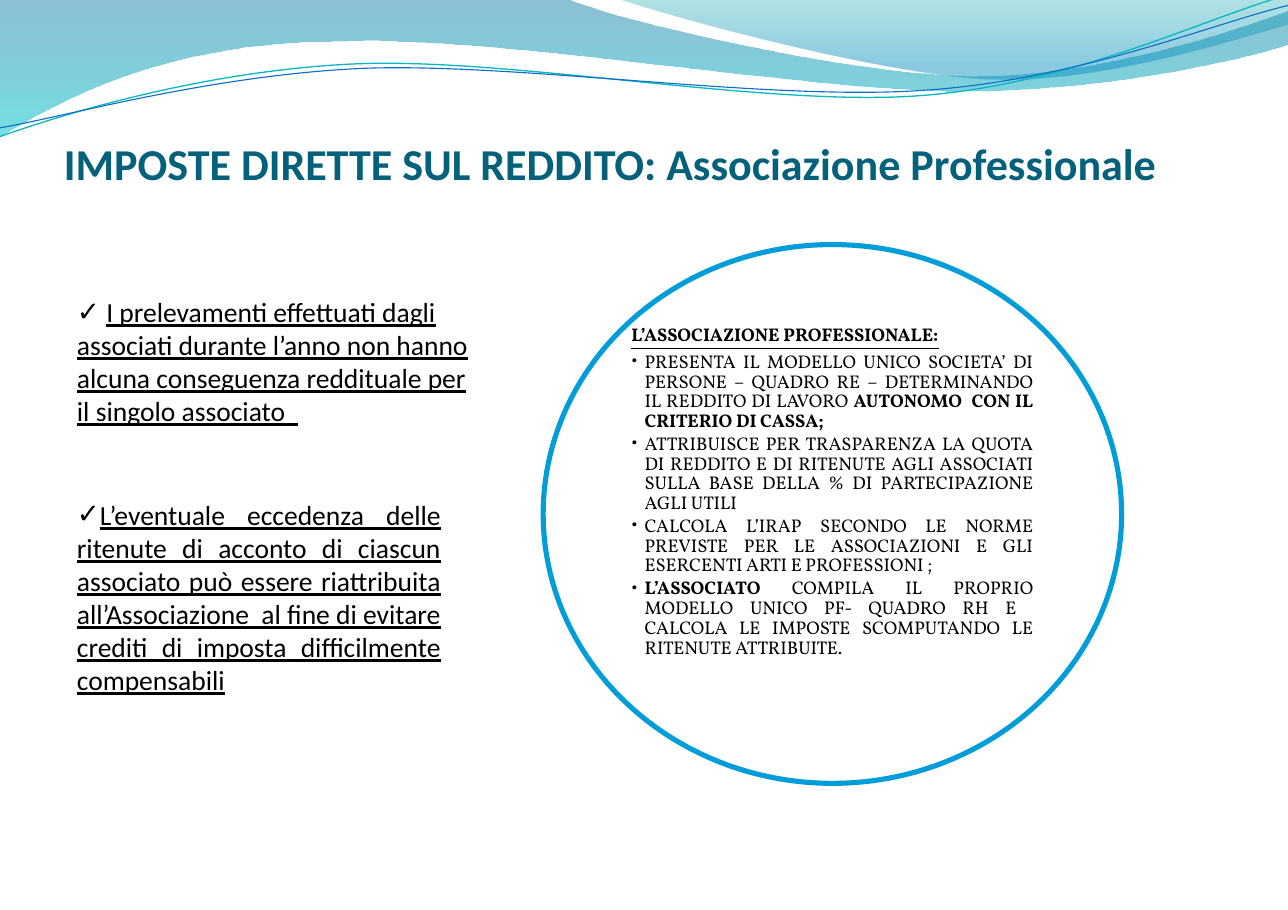
from dataclasses import dataclass

from lxml import etree
from pptx import Presentation
from pptx import util as u
from pptx.dml.color import RGBColor
from pptx.enum import shapes, text
from pptx.oxml.ns import qn


@dataclass(frozen=True)
class Theme:
    """Colours, fonts and type sizes of the slide."""
    ink: str = "000000"
    title: str = "04617B"
    paper: str = "FFFFFF"
    ring: str = "009DD9"
    teal: str = "0AB8BF"
    blue: str = "0F6FC6"
    band: tuple = ((0, "0074A1", 45), (1, "00C6CF", 55))
    crest: tuple = ((0, "00A1A9", 30), (0.8, "008BBF", 45))
    sans: str = "Calibri"
    serif: str = "Vollkorn"
    head: float = 28.8
    body: float = 18
    small: float = 12


THEME = Theme()
LEFT, JUST = text.PP_ALIGN.LEFT, text.PP_ALIGN.JUSTIFY

BAND = [(0, 0), (5.15, -0.01), (5.56, 0.18, 7.76, 0.69, 8.87, 0.69),
        (9.98, 0.69, 11.21, 0.28, 11.69, 0.1), (11.71, 0.4),
        (11.5, 0.48, 10.17, 0.83, 8.72, 0.83),
        (7.27, 0.83, 4.46, 0.31, 3.01, 0.38),
        (1.51, 0.39, 0.54, 0.91, -0.01, 1.25)]
CREST = [(5.6, -0.01), (5.96, 0.12, 7.97, 0.68, 8.99, 0.72),
         (10.01, 0.76, 11.24, 0.35, 11.69, 0.23), (11.69, 0)]
UPPER = [(0, 1.24), (0.56, 1.04, 1.85, 0.64, 3.23, 0.58),
         (4.62, 0.52, 6.93, 0.97, 8.33, 0.87),
         (9.74, 0.77, 10.97, 0.15, 11.67, -0.04)]
LOWER = [(0, 1.16), (0.55, 1.07, 1.91, 0.68, 3.31, 0.62),
         (4.71, 0.57, 6.98, 0.92, 8.38, 0.82),
         (9.78, 0.73, 11.01, 0.21, 11.69, 0.05)]

TITLE = "IMPOSTE DIRETTE SUL REDDITO: Associazione Professionale"
DRAWS = ("I prelevamenti effettuati dagli associati durante l’anno non hanno "
         "alcuna conseguenza reddituale per il singolo associato  ")
EXCESS = ("L’eventuale eccedenza delle ritenute di acconto di ciascun associato "
          "può essere riattribuita all’Associazione  al fine di evitare crediti "
          "di imposta difficilmente compensabili")
LEAD = "L’ASSOCIAZIONE PROFESSIONALE:"
DUTIES = [
    [("PRESENTA IL MODELLO UNICO SOCIETA’ DI PERSONE – QUADRO RE – "
      "DETERMINANDO IL REDDITO DI LAVORO ", False),
     ("AUTONOMO  CON IL CRITERIO DI CASSA;", True)],
    [("ATTRIBUISCE PER TRASPARENZA LA QUOTA DI REDDITO E DI RITENUTE AGLI "
      "ASSOCIATI SULLA BASE DELLA % DI PARTECIPAZIONE AGLI UTILI", False)],
    [("CALCOLA L’IRAP SECONDO LE NORME PREVISTE PER LE ASSOCIAZIONI E GLI "
      "ESERCENTI ARTI E PROFESSIONI ;", False)],
    [("L’ASSOCIATO", True),
     (" COMPILA IL PROPRIO MODELLO UNICO PF- QUADRO RH E  CALCOLA LE IMPOSTE "
      "SCOMPUTANDO LE RITENUTE ATTRIBUITE.", False)],
]


def style(item, **vals):
    """Set each given value as an attribute of the item."""
    for name, val in vals.items():
        setattr(item, name, val)


def bend(shape, steps):
    """Turn the segments that have control points into Bézier curves."""
    lines = list(shape.element.spPr.iter(qn("a:lnTo")))
    for line, step in zip(lines, steps):
        if len(step) == 2:
            continue
        curve = etree.Element(qn("a:cubicBezTo"))
        for x, y in (step[:2], step[2:4], step[4:]):
            etree.SubElement(curve, qn("a:pt"), x=str(u.Inches(x) - shape.left),
                             y=str(u.Inches(y) - shape.top))
        line.getparent().replace(line, curve)


def outline(slide, route, close):
    """Draw a flat freeform along the route."""
    first, *rest = [tuple(map(u.Inches, step[-2:])) for step in route]
    pen = slide.shapes.build_freeform(*first)
    pen.add_line_segments(rest, close=close)
    shape = pen.convert_to_shape()
    shape.shadow.inherit = False
    bend(shape, route[1:])
    return shape


def wave(slide, route, stops):
    """Draw a closed wave with a see-through gradient from top to bottom."""
    shape = outline(slide, route, True)
    shape.line.fill.background()
    shape.fill.gradient()
    shape.fill.gradient_angle = 270
    for stop, (spot, tint, part) in zip(shape.fill.gradient_stops, stops):
        stop.position = spot
        stop.color.rgb = RGBColor.from_string(tint)
    tints = shape.element.spPr.iter(qn("a:srgbClr"))
    for node, (spot, tint, part) in zip(list(tints), stops):
        etree.SubElement(node, qn("a:alpha"), val=str(part * 1000))


def stroke(shape, tint, width):
    """Give the shape a solid line."""
    shape.line.color.rgb = RGBColor.from_string(tint)
    shape.line.width = u.Pt(width)


def ripple(slide, route, tint, width):
    """Draw an open curved line."""
    shape = outline(slide, route, False)
    shape.fill.background()
    stroke(shape, tint, width)


def ring(slide, box):
    """Draw the outlined ellipse."""
    shape = slide.shapes.add_shape(shapes.MSO_SHAPE.OVAL, *map(u.Inches, box))
    shape.shadow.inherit = False
    shape.fill.solid()
    shape.fill.fore_color.rgb = RGBColor.from_string(THEME.paper)
    stroke(shape, THEME.ring, 3.35)


def frame(slide, box, pad, anchor=text.MSO_ANCHOR.TOP):
    """Add a wrapped text box with the given left, top, right, bottom insets."""
    body = slide.shapes.add_textbox(*map(u.Inches, box)).text_frame
    sides = ("margin_left", "margin_top", "margin_right", "margin_bottom")
    style(body, word_wrap=True, vertical_anchor=anchor,
          **dict(zip(sides, map(u.Inches, pad))))
    return body


def write(para, words, tint=THEME.ink, **font):
    """Add one run in the given font."""
    run = para.add_run()
    run.text = words
    style(run.font, **font)
    run.font.color.rgb = RGBColor.from_string(tint)


def bullet(para, mark, face, hang=0):
    """Give the paragraph a bullet mark and a hanging indent."""
    props = para._p.get_or_add_pPr()
    props.set("marL", str(u.Inches(hang)))
    props.set("indent", str(-u.Inches(hang)))
    etree.SubElement(props, qn("a:buFont"), typeface=face)
    etree.SubElement(props, qn("a:buChar"), char=mark)


def note(slide, box, words, align, gap=""):
    """Add an underlined note with a tick."""
    para = frame(slide, box, (0.1, 0.05, 0.1, 0.05)).paragraphs[0]
    para.alignment = align
    bullet(para, "✓", THEME.sans)
    font = dict(name=THEME.sans, size=u.Pt(THEME.body))
    if gap:
        write(para, gap, **font)
    write(para, words, underline=True, **font)


def duties(slide, box):
    """Add the heading and the list of duties inside the ring."""
    body = frame(slide, box, (0.02,) * 4)
    font = dict(name=THEME.serif, size=u.Pt(THEME.small))
    lead = body.paragraphs[0]
    style(lead, line_spacing=0.9, space_after=u.Pt(4.2))
    write(lead, LEAD, bold=True, underline=True, **font)
    for duty in DUTIES:
        para = body.add_paragraph()
        style(para, level=1, alignment=JUST, line_spacing=0.9,
              space_after=u.Pt(1.8))
        bullet(para, "•", THEME.serif, 0.12)
        for words, bold in duty:
            write(para, words, bold=bold, **font)


def main():
    """Build the slide and save it."""
    deck = Presentation()
    style(deck, slide_width=u.Inches(11.69), slide_height=u.Inches(8.26))
    slide = deck.slides.add_slide(deck.slide_layouts[6])
    wave(slide, BAND, THEME.band)
    wave(slide, CREST, THEME.crest)
    ripple(slide, UPPER, THEME.teal, 0.85)
    ripple(slide, LOWER, THEME.blue, 0.75)
    head = frame(slide, (0.58, 0.85, 10.53, 0.87), (0, 0.06, 0, 0),
                 text.MSO_ANCHOR.BOTTOM)
    write(head.paragraphs[0], TITLE, THEME.title, name=THEME.sans,
          size=u.Pt(THEME.head), bold=True)
    ring(slide, (4.93, 2.22, 5.25, 4.89))
    duties(slide, (5.71, 2.94, 3.69, 3.44))
    note(slide, (0.6, 2.63, 3.75, 1.31), DRAWS, LEFT, " ")
    note(slide, (0.6, 4.47, 3.5, 1.92), EXCESS, JUST)
    deck.save("out.pptx")


if __name__ == "__main__":
    main()
